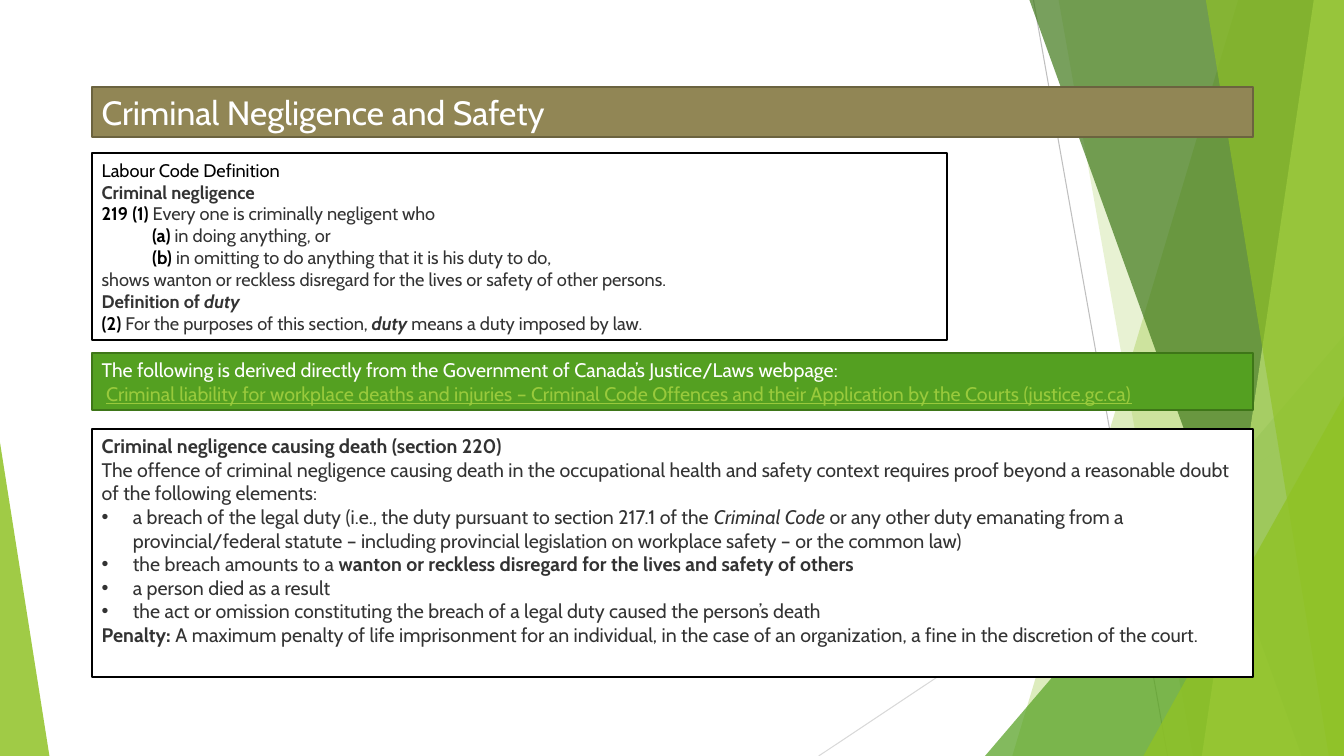
from lxml.etree import SubElement
from pptx import Presentation
from pptx.dml.color import RGBColor
from pptx.enum.shapes import MSO_CONNECTOR, MSO_SHAPE
from pptx.enum.text import MSO_ANCHOR, PP_ALIGN
from pptx.oxml.ns import qn
from pptx.util import Inches, Pt

WIDTH, HEIGHT = 13.33, 7.5
LEFT, FULL, NARROW = 0.91, 11.52, 8.48
FONT = "Cabin"
COLORS = {
    "white": "FFFFFF", "black": "000000", "body": "333333", "link": "99CA3C",
    "lime": "90C226", "green": "54A021", "forest": "3F7819", "pale": "C0E474",
    "green edge": "3E7618", "olive": "918655", "olive edge": "6B633F",
    "grey": "BFBFBF", "light grey": "D9D9D9",
}


def rgb(name):
    return RGBColor.from_string(COLORS[name])


def paint(shape, color, opacity=100, edge=None):
    """Fill a shape, with an optional outline and opacity in percent."""
    shape.shadow.inherit = False
    shape.fill.solid()
    shape.fill.fore_color.rgb = rgb(color)
    if opacity < 100:
        tint = shape.fill._xPr.find(qn("a:solidFill"))[0]
        SubElement(tint, qn("a:alpha"), val=str(opacity * 1000))
    if edge:
        shape.line.color.rgb = rgb(edge)
        shape.line.width = Pt(1.5)
    else:
        shape.line.fill.background()


def write(frame, *runs, size=14, color="body", indent=0, bullet=None, first=False):
    """Add one paragraph; a run is (text, marks, color), the last two optional.
    Marks: b bold, i italic, u underline."""
    paragraph = frame.paragraphs[0] if first else frame.add_paragraph()
    paragraph.alignment = PP_ALIGN.LEFT
    props = paragraph._p.get_or_add_pPr()
    props.set("marL", str(Inches(indent)))
    props.set("indent", str(-Inches(indent) if bullet else 0))
    if bullet:
        SubElement(props, qn("a:buFont"), typeface="Arial")
        SubElement(props, qn("a:buChar"), char=bullet)
    for text, marks, run_color in ((*run, "", color)[:3] if len(run) == 1
                                   else (*run, color)[:3] for run in runs):
        run = paragraph.add_run()
        run.text = text
        font = run.font
        font.name, font.size = FONT, Pt(size)
        font.color.rgb = rgb(run_color)
        font.bold, font.italic = "b" in marks, "i" in marks
        font.underline = "u" in marks


def panel(slide, box, paragraphs, fill, edge, anchor=MSO_ANCHOR.MIDDLE, **style):
    """A bordered rectangle; each paragraph is (runs, format)."""
    shape = slide.shapes.add_shape(MSO_SHAPE.RECTANGLE, *map(Inches, box))
    paint(shape, fill, edge=edge)
    frame = shape.text_frame
    frame.word_wrap = True
    frame.vertical_anchor = anchor
    for index, (runs, extra) in enumerate(paragraphs):
        write(frame, *runs, first=index == 0, **{**style, **extra})


def ray(slide, start, end, color):
    line = slide.shapes.add_connector(
        MSO_CONNECTOR.STRAIGHT, *map(Inches, (*start, *end)))
    line.line.color.rgb = rgb(color)
    line.line.width = Pt(0.75)
    SubElement(line._element.spPr, qn("a:effectLst"))


def facet(slide, top, bottom, color, opacity):
    """A full-height pane from a slanted left side to the slide's right edge."""
    builder = slide.shapes.build_freeform(Inches(top), 0)
    builder.add_line_segments(
        [(Inches(x), Inches(y)) for x, y in
         ((WIDTH, 0), (WIDTH, HEIGHT), (bottom, HEIGHT))], close=True)
    paint(builder.convert_to_shape(), color, opacity)


def corner(slide, left, top, width, apex, color, opacity):
    """A right triangle standing on the slide's bottom edge."""
    shape = slide.shapes.add_shape(
        MSO_SHAPE.ISOSCELES_TRIANGLE,
        *map(Inches, (left, top, width, HEIGHT - top)))
    shape.adjustments[0] = apex
    paint(shape, color, opacity)


def backdrop(slide):
    ray(slide, (10.25, 0), (11.58, HEIGHT), "grey")
    ray(slide, (WIDTH, 4.03), (8.12, HEIGHT), "light grey")
    facet(slide, 12.28, 10.04, "lime", 30)
    facet(slide, 10.5, 11.83, "lime", 20)
    corner(slide, 9.77, 3.33, WIDTH - 9.77, 1, "green", 72)
    facet(slide, 10.21, 12.91, "forest", 70)
    facet(slide, 13.03, 11.92, "pale", 70)
    facet(slide, 11.96, 13.18, "lime", 65)
    corner(slide, 11.34, 3.93, WIDTH - 11.34, 1, "lime", 80)
    corner(slide, 0, 4.39, 0.49, 0, "lime", 85)


def title_bar(slide, box):
    panel(slide, box, [([("Criminal Negligence and Safety",)], {})],
          "olive", "olive edge", size=24, color="white")


def definition(slide, box):
    clause = {"indent": 0.5}
    panel(slide, box, [
        ([("Labour Code Definition", "", "black")], {}),
        ([("Criminal negligence", "b")], {}),
        ([("219 (1)", "b", "black"), (" Every one is criminally negligent who",)], {}),
        ([("(a)", "b", "black"), (" in doing anything, or",)], clause),
        ([("(b)", "b", "black"),
          (" in omitting to do anything that it is his duty to do,",)], clause),
        ([("shows wanton or reckless disregard for the lives or safety of "
           "other persons.",)], {}),
        ([("Definition of ", "b"), ("duty", "bi")], {}),
        ([("(2)", "b", "black"), (" For the purposes of this section, ",),
          ("duty", "bi"), (" means a duty imposed by law.",)], {}),
    ], "white", "black", size=13)


def source_bar(slide, box):
    panel(slide, box, [
        ([("The following is derived directly from the Government of Canada’s "
           "Justice/Laws webpage:",)], {}),
        ([(" ",), ("Criminal liability for workplace deaths and injuries – Criminal "
                   "Code Offences and their Application by the Courts "
                   "(justice.gc.ca)", "u", "link")], {}),
    ], "green", "green edge", color="white")


def offence(slide, box):
    element = {"indent": 0.31, "bullet": "•"}
    panel(slide, box, [
        ([("Criminal negligence causing death (section 220)", "b")], {}),
        ([("The offence of criminal negligence causing death in the occupational "
           "health and safety context requires proof beyond a reasonable doubt of "
           "the following elements:",)], {}),
        ([("a breach of the legal duty (i.e., the duty pursuant to section 217.1 "
           "of the ",), ("Criminal Code", "i"),
          (" or any other duty emanating from a provincial/federal statute – "
           "including provincial legislation on workplace safety – or the "
           "common law)",)], element),
        ([("the breach amounts to a ",),
          ("wanton or reckless disregard for the lives and safety of others", "b")],
         element),
        ([("a person died as a result",)], element),
        ([("the act or omission constituting the breach of a legal duty caused "
           "the person’s death",)], element),
        ([("Penalty:", "b"),
          (" A maximum penalty of life imprisonment for an individual, in the case "
           "of an organization, a fine in the discretion of the court.",)], {}),
    ], "white", "black", anchor=MSO_ANCHOR.TOP)


def main():
    deck = Presentation()
    deck.slide_width, deck.slide_height = Inches(WIDTH), Inches(HEIGHT)
    slide = deck.slides.add_slide(deck.slide_layouts[6])
    backdrop(slide)
    title_bar(slide, (LEFT, 0.86, FULL, 0.5))
    definition(slide, (LEFT, 1.52, NARROW, 1.85))
    source_bar(slide, (LEFT, 3.5, FULL, 0.57))
    offence(slide, (LEFT, 4.26, FULL, 2.46))
    deck.save("out.pptx")


if __name__ == "__main__":
    main()
